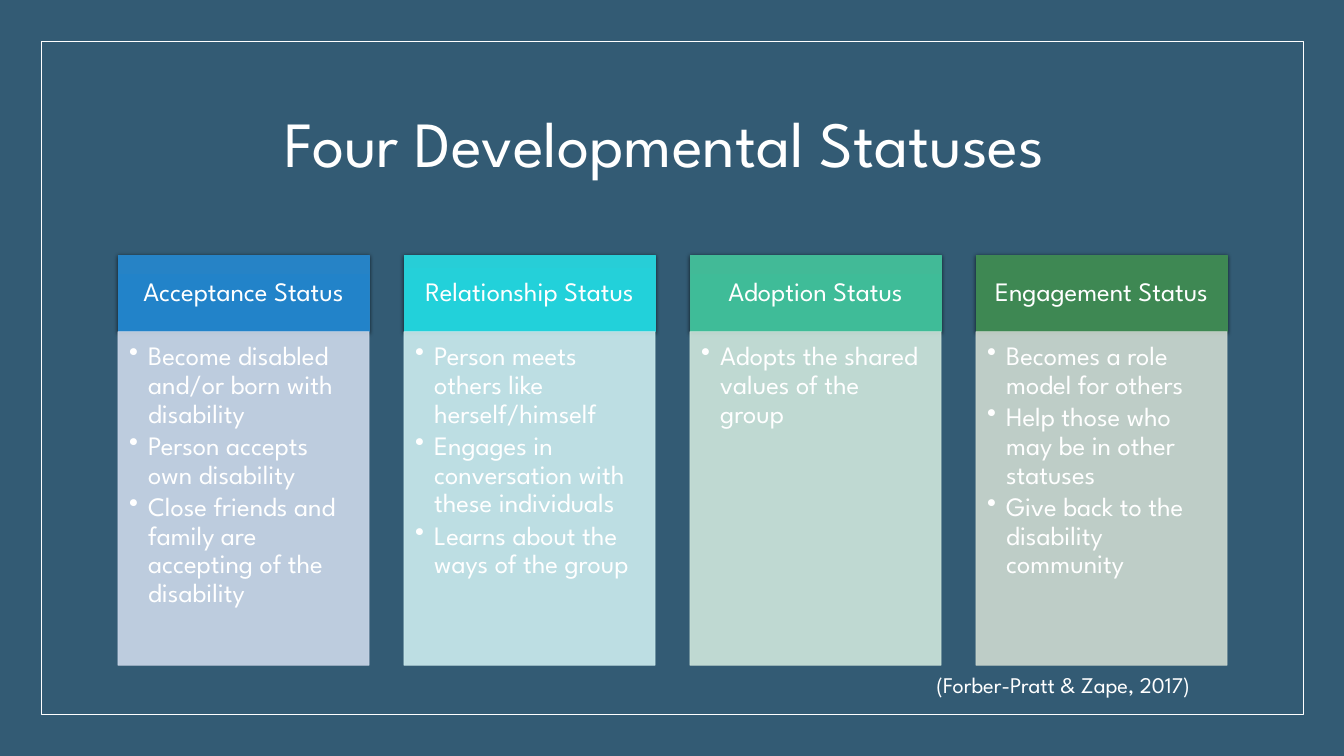
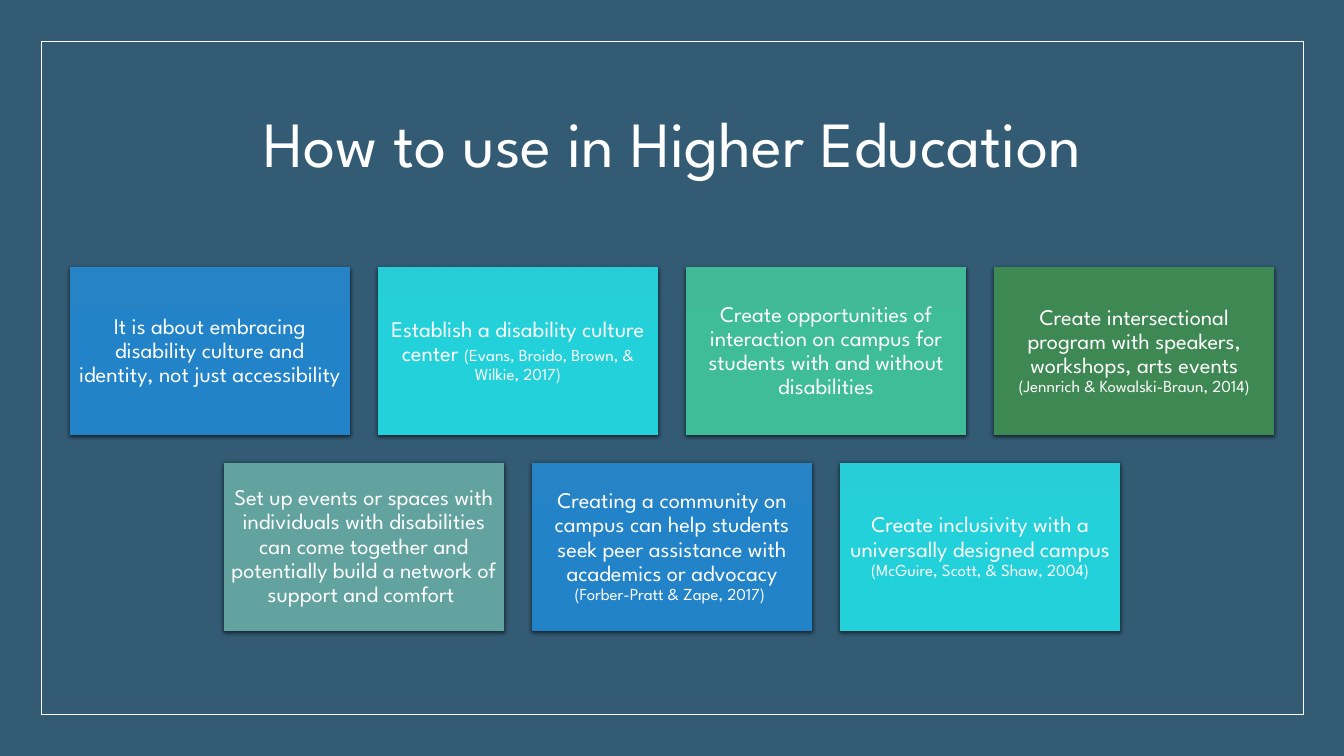
import pptx
import pptx.dml.color
import pptx.enum.shapes
import pptx.enum.text
import pptx.oxml
import pptx.oxml.ns
import pptx.util
from lxml import etree

Inches, Pt, qn = pptx.util.Inches, pptx.util.Pt, pptx.oxml.ns.qn
ALIGN, ANCHOR = pptx.enum.text.PP_ALIGN, pptx.enum.text.MSO_ANCHOR
RECTANGLE = pptx.enum.shapes.MSO_SHAPE.RECTANGLE

FONT, WHITE, BACKGROUND = "League Spartan", "FFFFFF", "335B74"
BLUE, CYAN, MINT = ("2683C6", "2283C9"), ("27CED7", "22D1DA"), ("42BA97", "3FBC98")
GREEN, TEAL = ("3E8853", "3C8952"), ("62A39F", "60A4A0")

STATUSES = [
    ("Acceptance Status", BLUE, "CDD9EA", [
        "Become disabled and/or born with disability",
        "Person accepts own disability",
        "Close friends and family are accepting of the disability"]),
    ("Relationship Status", CYAN, "CDEDF0", [
        "Person meets others like herself/himself",
        "Engages in conversation with these individuals",
        "Learns about the ways of the group"]),
    ("Adoption Status", MINT, "CFE7DD", [
        "Adopts the shared values of the group"]),
    ("Engagement Status", GREEN, "CEDAD1", [
        "Becomes a role model for others",
        "Help those who may be in other statuses",
        "Give back to the disability community"]),
]

IDEAS = [
    (BLUE, "It is about embracing disability culture and identity, not just accessibility ", ""),
    (CYAN, "Establish a disability culture center ", "(Evans, Broido, Brown, & Wilkie, 2017)"),
    (MINT, "Create opportunities of interaction on campus for students with and without "
           "disabilities", ""),
    (GREEN, "Create intersectional program with speakers, workshops, arts events ",
     "(Jennrich & Kowalski-Braun, 2014)"),
    (TEAL, "Set up events or spaces with individuals with disabilities can come together and "
           "potentially build a network of support and comfort ", ""),
    (BLUE, "Creating a community on campus can help students seek peer assistance with "
           "academics or advocacy ", "(Forber-Pratt & Zape, 2017) "),
    (CYAN, "Create inclusivity with a universally designed campus ",
     "(McGuire, Scott, & Shaw, 2004)"),
]


def rgb(color):
    """Turn a hex string into a colour."""
    return pptx.dml.color.RGBColor.from_string(color)


def assign(obj, **values):
    """Set several attributes of an object."""
    for name, value in values.items():
        setattr(obj, name, value)


def write(sp, paragraphs, insets=(0.1, 0.05, 0.1, 0.05), anchor=ANCHOR.MIDDLE, bullet=False, **fmt):
    """Fill a shape with paragraphs, each a list of (text, size) runs."""
    tf = sp.text_frame
    margins = zip(("margin_left", "margin_top", "margin_right", "margin_bottom"), map(Inches, insets))
    assign(tf, word_wrap=True, vertical_anchor=anchor, **dict(margins))
    for i, runs in enumerate(paragraphs):
        p = tf.add_paragraph() if i else tf.paragraphs[0]
        assign(p, **{"alignment": ALIGN.CENTER, "line_spacing": 0.9, **fmt})
        if bullet:
            pPr = p._p.get_or_add_pPr()
            pPr.set("marL", str(Inches(0.19)))
            pPr.set("indent", str(-Inches(0.19)))
            etree.SubElement(pPr, qn("a:buChar"), char="•")
        for text, size in runs:
            r = p.add_run()
            r.text = text
            assign(r.font, name=FONT, size=Pt(size))
            r.font.color.rgb = rgb(WHITE)


def add_rect(s, box, line=None):
    """Add an unfilled rectangle without shadow, outlined if a colour is given."""
    sp = s.shapes.add_shape(RECTANGLE, *map(Inches, box))
    sp.shadow.inherit = False
    sp.fill.background()
    if line:
        sp.line.color.rgb = rgb(line)
        sp.line.width = Pt(0.5)
    else:
        sp.line.fill.background()
    return sp


def add_raised_rect(s, box, tones, line=None):
    """Add a rectangle with a vertical gradient and a soft shadow."""
    sp = add_rect(s, box, line)
    sp.fill.gradient()
    sp.fill.gradient_angle = 270
    for stop, tone, position in zip(sp.fill.gradient_stops, tones, (0, 0.5)):
        stop.color.rgb = rgb(tone)
        stop.position = position
    effects = sp._element.spPr.find(qn("a:effectLst"))
    shadow = etree.SubElement(effects, qn("a:outerShdw"), blurRad=str(Pt(3)), dist=str(Pt(1)),
                              dir="5400000", algn="ctr", rotWithShape="0")
    color = etree.SubElement(shadow, qn("a:srgbClr"), val="000000")
    etree.SubElement(color, qn("a:alpha"), val="63000")
    return sp


def add_panel(s, box, color):
    """Add a slightly transparent rectangle."""
    sp = add_rect(s, box, color)
    sp.fill.solid()
    sp.fill.fore_color.rgb = rgb(color)
    for node in sp._element.spPr.iter(qn("a:srgbClr")):
        etree.SubElement(node, qn("a:alpha"), val="90000")
    return sp


def add_text(s, box, text, size, **fmt):
    """Add a text box holding one run."""
    write(s.shapes.add_textbox(*map(Inches, box)), [[(text, size)]], **fmt)


def add_slide(prs, title):
    """Add a slide with the shared background, frame and title."""
    s = prs.slides.add_slide(prs.slide_layouts[6])
    s.background.fill.solid()
    s.background.fill.fore_color.rgb = rgb(BACKGROUND)
    add_rect(s, (0.41, 0.41, 12.52, 6.68), WHITE)
    add_text(s, (1.17, 0.7, 11, 1.5), title, 46)
    return s


def add_status_columns(s, box, statuses, width=2.49, head=0.76):
    """Spread headed bullet columns evenly over the box."""
    x, y, w, h = box
    pitch = (w - width) / (len(statuses) - 1)
    for i, (name, tones, tint, points) in enumerate(statuses):
        left = x + i * pitch
        header = add_raised_rect(s, (left, y, width, head), tones, tones[0])
        write(header, [[(name, 19)]], (0.15, 0.08, 0.15, 0.08))
        panel = add_panel(s, (left, y + head, width, h - head), tint)
        write(panel, [[(point, 19)] for point in points], (0.11, 0.11, 0.15, 0.17),
              ANCHOR.TOP, bullet=True, alignment=ALIGN.LEFT, space_after=Pt(2.5))


def add_idea_cards(s, box, ideas, columns=4, width=2.78, height=1.67):
    """Lay cards out in rows over the box, centring a short row."""
    x, y, w, h = box
    pitch_x = (w - width) / (columns - 1)
    pitch_y = h - height
    for i, (tones, text, source) in enumerate(ideas):
        row, column = divmod(i, columns)
        missing = max(0, (row + 1) * columns - len(ideas))
        left = x + (column + missing / 2) * pitch_x
        card = add_raised_rect(s, (left, y + row * pitch_y, width, height), tones)
        runs = [(text, 16)] + ([(source, 12)] if source else [])
        write(card, [runs], (0.07,) * 4)


def main():
    """Build and save the presentation."""
    prs = pptx.Presentation()
    assign(prs, slide_width=Inches(13.33), slide_height=Inches(7.5))
    s = add_slide(prs, "Four Developmental Statuses ")
    add_status_columns(s, (1.17, 2.53, 11, 4.07), STATUSES)
    add_text(s, (9.19, 6.61, 3.23, 0.37), "(Forber-Pratt & Zape, 2017)", 16,
             anchor=ANCHOR.TOP, alignment=ALIGN.LEFT, line_spacing=1.0)
    s = add_slide(prs, "How to use in Higher Education")
    add_idea_cards(s, (0.69, 2.65, 11.95, 3.61), IDEAS)
    prs.save("out.pptx")


if __name__ == "__main__":
    main()
